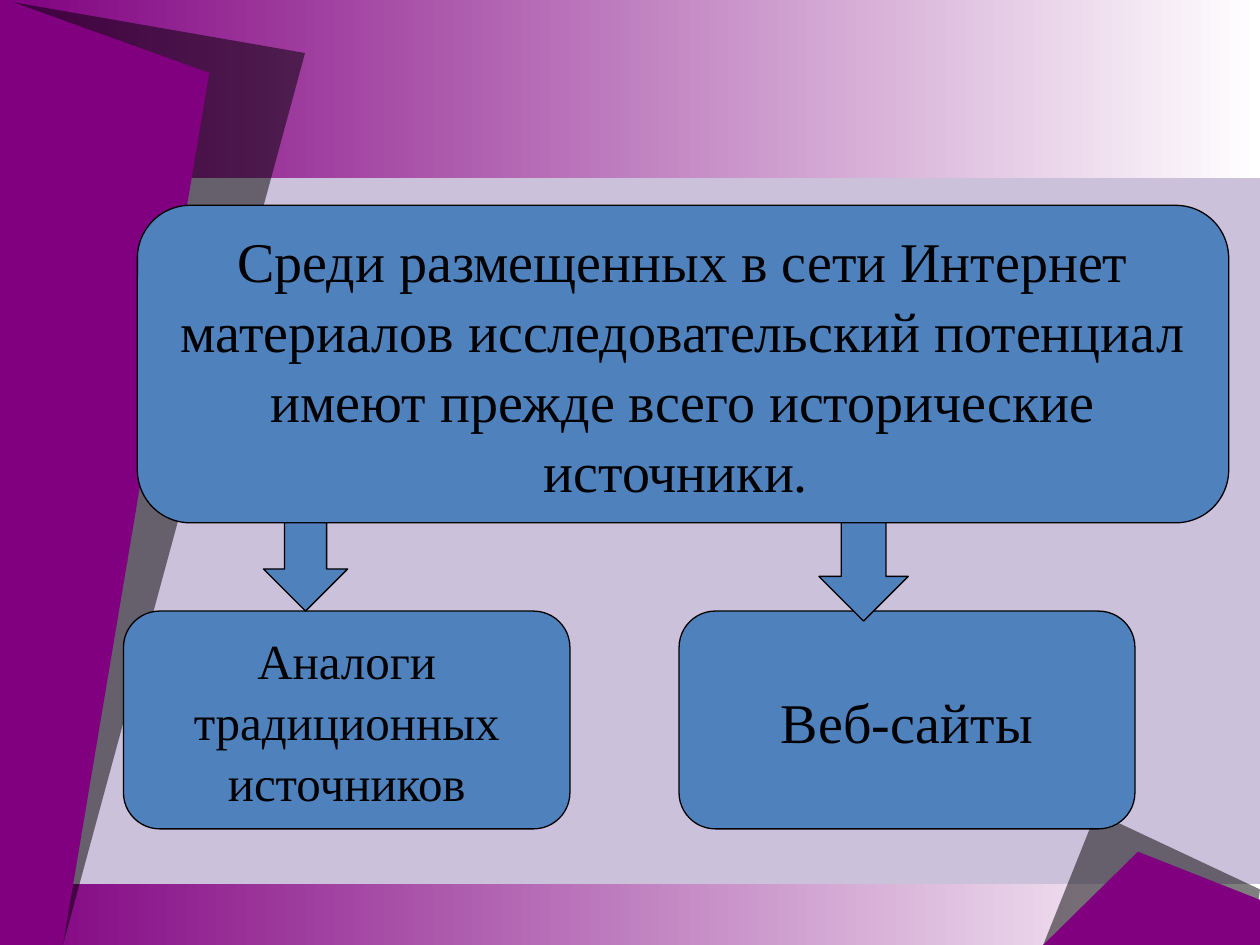
"""Build a slide on historical sources on the Internet: one statement leading to two kinds of source."""
import pptx
import pptx.dml.color
import pptx.enum.shapes
import pptx.enum.text
import pptx.oxml.ns
import pptx.util
from lxml import etree

Cm = pptx.util.Cm
Pt = pptx.util.Pt
Shape = pptx.enum.shapes.MSO_SHAPE
COLOURS = {"page": "CCC1DA", "purple": "800080", "white": "FFFFFF", "black": "000000", "blue": "4F81BD"}
WIDTH, HEIGHT = 25.4, 19.05


def colour(name):
    return pptx.dml.color.RGBColor.from_string(COLOURS[name])


def add_block(page, kind, left, top, width, height):
    block = page.shapes.add_shape(kind, Cm(left), Cm(top), Cm(width), Cm(height))
    block.shadow.inherit = False
    block.fill.solid()
    block.fill.fore_color.rgb = colour("blue")
    block.line.color.rgb = colour("black")
    block.line.width = Pt(0.75)
    return block


deck = pptx.Presentation()
deck.slide_width, deck.slide_height = Cm(WIDTH), Cm(HEIGHT)
page = deck.slides.add_slide(deck.slide_layouts[6])
page.background.fill.solid()
page.background.fill.fore_color.rgb = colour("page")

for top, height in [(0, 3.6), (17.83, 1.22)]:
    band = add_block(page, Shape.RECTANGLE, 0, top, WIDTH, height)
    band.line.fill.background()
    band.fill.gradient()
    band.fill.gradient_angle = 0
    for stop, position, name in zip(band.fill.gradient_stops, (0, 1), ("purple", "white")):
        stop.position = position
        stop.color.rgb = colour(name)

shards = [
    ("black", 50, [(22.1, 16.38), (WIDTH, 17.93), (25.25, HEIGHT), (21.03, HEIGHT)]),
    ("purple", 100, [(21.03, HEIGHT), (22.94, 17.17), (WIDTH, 18.14), (WIDTH, HEIGHT)]),
    ("black", 50, [(0, 0), (6.15, 1.07), (1.27, HEIGHT), (0, HEIGHT)]),
    ("purple", 100, [(0, -0.05), (4.22, 1.47), (1.27, HEIGHT), (0, HEIGHT)]),
]
for name, opacity, corners in shards:
    points = [(Cm(x), Cm(y)) for x, y in corners]
    outline = page.shapes.build_freeform(*points[0])
    outline.add_line_segments(points[1:], close=True)
    shard = outline.convert_to_shape()
    shard.shadow.inherit = False
    shard.line.fill.background()
    shard.fill.solid()
    shard.fill.fore_color.rgb = colour(name)
    if opacity < 100:
        tint = shard.fill._xPr.find(".//" + pptx.oxml.ns.qn("a:srgbClr"))
        etree.SubElement(tint, pptx.oxml.ns.qn("a:alpha"), val=str(opacity * 1000))

statement = (
    "Среди размещенных в сети Интернет материалов исследовательский потенциал "
    "имеют прежде всего исторические источники. "
)
boxes = [
    ("Аналоги традиционных источников", 28, (2.49, 12.32, 9, 4.39)),
    ("Веб-сайты", 32, (13.69, 12.32, 9.19, 4.39)),
    (statement, 32, (2.77, 4.14, 22, 6.4)),
]
for text, size, place in boxes:
    box = add_block(page, Shape.ROUNDED_RECTANGLE, *place)
    box.text_frame.word_wrap = True
    box.text_frame.vertical_anchor = pptx.enum.text.MSO_ANCHOR.MIDDLE
    para = box.text_frame.paragraphs[0]
    para.alignment = pptx.enum.text.PP_ALIGN.CENTER
    para.line_spacing = 1.04
    span = para.add_run()
    span.text = text
    span.font.name = "Times New Roman"
    span.font.size = Pt(size)
    span.font.color.rgb = colour("black")

for left, width, height in [(5.31, 1.7, 1.78), (16.51, 1.8, 1.98)]:
    add_block(page, Shape.DOWN_ARROW, left, 10.54, width, height)

deck.save("out.pptx")
